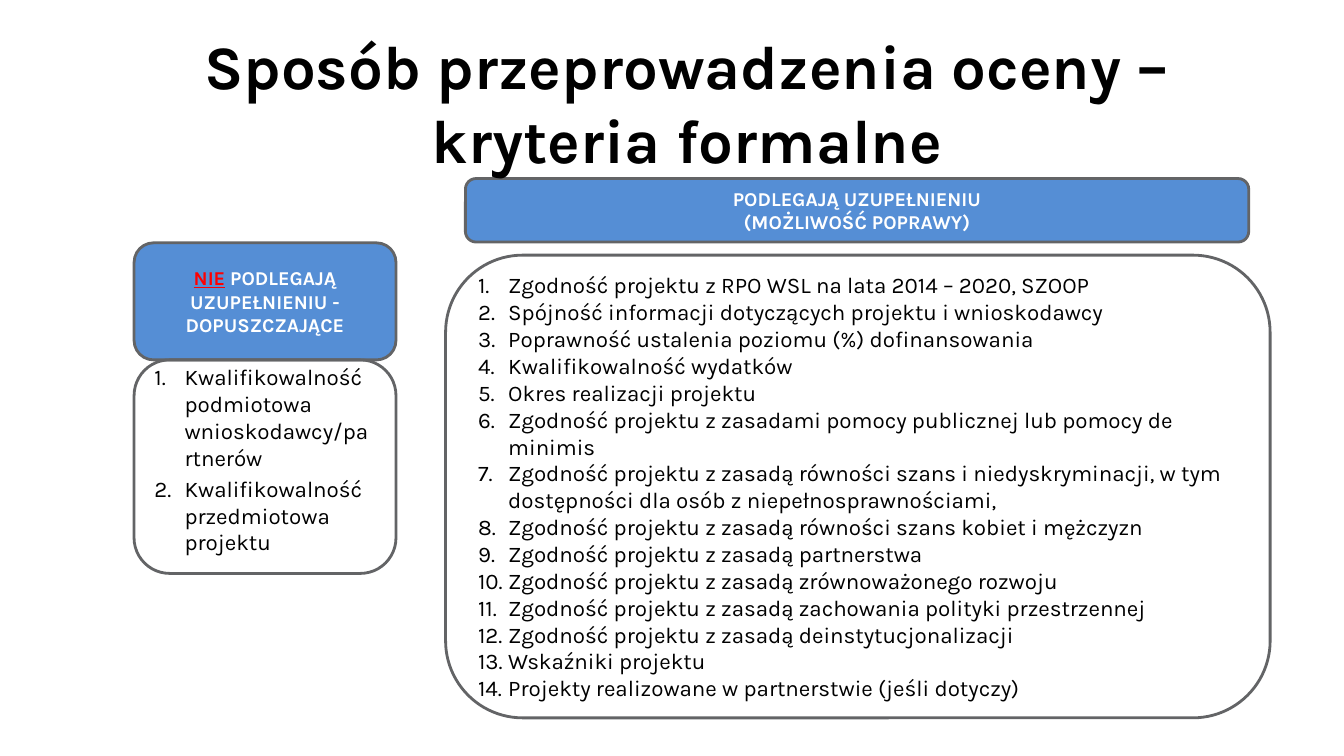
import pptx
import pptx.util
import pptx.dml.color
import pptx.enum.shapes
import pptx.enum.text
import lxml.etree
import pptx.oxml.ns

Cm, Pt = pptx.util.Cm, pptx.util.Pt
ALIGN = pptx.enum.text.PP_ALIGN
MIDDLE = pptx.enum.text.MSO_ANCHOR.MIDDLE


def color(code):
    return pptx.dml.color.RGBColor.from_string(code)


def write(para, text, size=16, ink="000000", bold=False, under=False):
    """Add one formatted run to a paragraph."""
    run = para.add_run()
    run.text = text
    font = run.font
    font.name, font.size = Deck.font, Pt(size)
    font.bold, font.underline = bold, under
    font.color.rgb = color(ink)


def number(para, indent):
    """Give a paragraph an automatic number with a hanging indent."""
    props = para._p.get_or_add_pPr()
    props.set("marL", str(indent))
    props.set("indent", str(-indent))
    tag = pptx.oxml.ns.qn("a:buAutoNum")
    lxml.etree.SubElement(props, tag).set("type", "arabicPeriod")


class Deck:
    font = "Karla"
    blue, edge, white, red = "558ED5", "636466", "FFFFFF", "FF0000"

    def __init__(self):
        self.file = pptx.Presentation()
        self.file.slide_width = Cm(33.87)
        self.file.slide_height = Cm(19.05)
        self.slide = self.file.slides.add_slide(self.file.slide_layouts[5])

    def title(self, text, left, top, width, height):
        shape = self.slide.shapes.title
        shape.left, shape.top = Cm(left), Cm(top)
        shape.width, shape.height = Cm(width), Cm(height)
        frame = shape.text_frame
        frame.word_wrap = True
        frame.auto_size = pptx.enum.text.MSO_AUTO_SIZE.NONE
        frame.vertical_anchor = MIDDLE
        para = frame.paragraphs[0]
        para.alignment = ALIGN.CENTER
        write(para, text, size=44, bold=True)
        # The title lies in front of the boxes
        self.slide.shapes._spTree.append(shape._element)

    def box(self, left, top, width, height, fill=None):
        kind = pptx.enum.shapes.MSO_SHAPE.ROUNDED_RECTANGLE
        shape = self.slide.shapes.add_shape(
            kind, Cm(left), Cm(top), Cm(width), Cm(height))
        shape.shadow.inherit = False
        if fill:
            shape.fill.solid()
            shape.fill.fore_color.rgb = color(fill)
        else:
            shape.fill.background()
        shape.line.color.rgb = color(self.edge)
        shape.line.width = Pt(2)
        frame = shape.text_frame
        frame.word_wrap = True
        frame.vertical_anchor = MIDDLE
        return frame

    def header(self, lines, *place):
        """Blue box; each line is a list of (text, format) parts."""
        frame = self.box(*place, fill=self.blue)
        for i, parts in enumerate(lines):
            para = frame.add_paragraph() if i else frame.paragraphs[0]
            para.alignment = ALIGN.CENTER
            for text, style in parts:
                write(para, text, **{"size": 14, "bold": True,
                                     "ink": self.white, **style})

    def items(self, texts, *place, gap=0, foot=0.13):
        """Outlined box with a numbered list."""
        frame = self.box(*place)
        frame.margin_bottom = Cm(foot)
        for i, text in enumerate(texts):
            para = frame.add_paragraph() if i else frame.paragraphs[0]
            number(para, Cm(0.76))
            para.alignment = ALIGN.LEFT
            para.space_before = Pt(gap if i else 0)
            write(para, text)


def main():
    deck = Deck()

    # Criteria that cannot be amended
    left, width = 3.38, 6.6
    deck.header([[("NIE", {"ink": deck.red, "under": True}),
                  (" PODLEGAJĄ UZUPEŁNIENIU - DOPUSZCZAJĄCE", {})]],
                left, 6.12, width, 2.95)

    # Criteria that can be amended
    deck.header([[("PODLEGAJĄ UZUPEŁNIENIU", {})],
                 [("(MOŻLIWOŚĆ POPRAWY)", {})]],
                11.73, 4.5, 19.74, 1.6)
    deck.items([
        "Zgodność projektu z RPO WSL na lata 2014 – 2020, SZOOP",
        "Spójność informacji dotyczących projektu i wnioskodawcy",
        "Poprawność ustalenia poziomu (%) dofinansowania",
        "Kwalifikowalność wydatków",
        "Okres realizacji projektu",
        "Zgodność projektu z zasadami pomocy publicznej lub pomocy de minimis",
        "Zgodność projektu z zasadą równości szans i niedyskryminacji, "
        "w tym dostępności dla osób z niepełnosprawnościami,",
        "Zgodność projektu z zasadą równości szans kobiet i mężczyzn",
        "Zgodność projektu z zasadą partnerstwa",
        "Zgodność projektu z zasadą zrównoważonego rozwoju",
        "Zgodność projektu z zasadą zachowania polityki przestrzennej",
        "Zgodność projektu z zasadą deinstytucjonalizacji",
        "Wskaźniki projektu",
        "Projekty realizowane w partnerstwie (jeśli dotyczy)",
    ], 11.23, 6.43, 20.78, 11.66)

    # List under the left header
    deck.items([
        "Kwalifikowalność podmiotowa wnioskodawcy/partnerów",
        "Kwalifikowalność przedmiotowa projektu",
    ], left, 9.07, width, 5.38, gap=3, foot=0.5)

    # Title
    deck.title("Sposób przeprowadzenia oceny – kryteria formalne",
               2.08, 0.97, 30.48, 3.18)

    deck.file.save("out.pptx")


if __name__ == "__main__":
    main()
